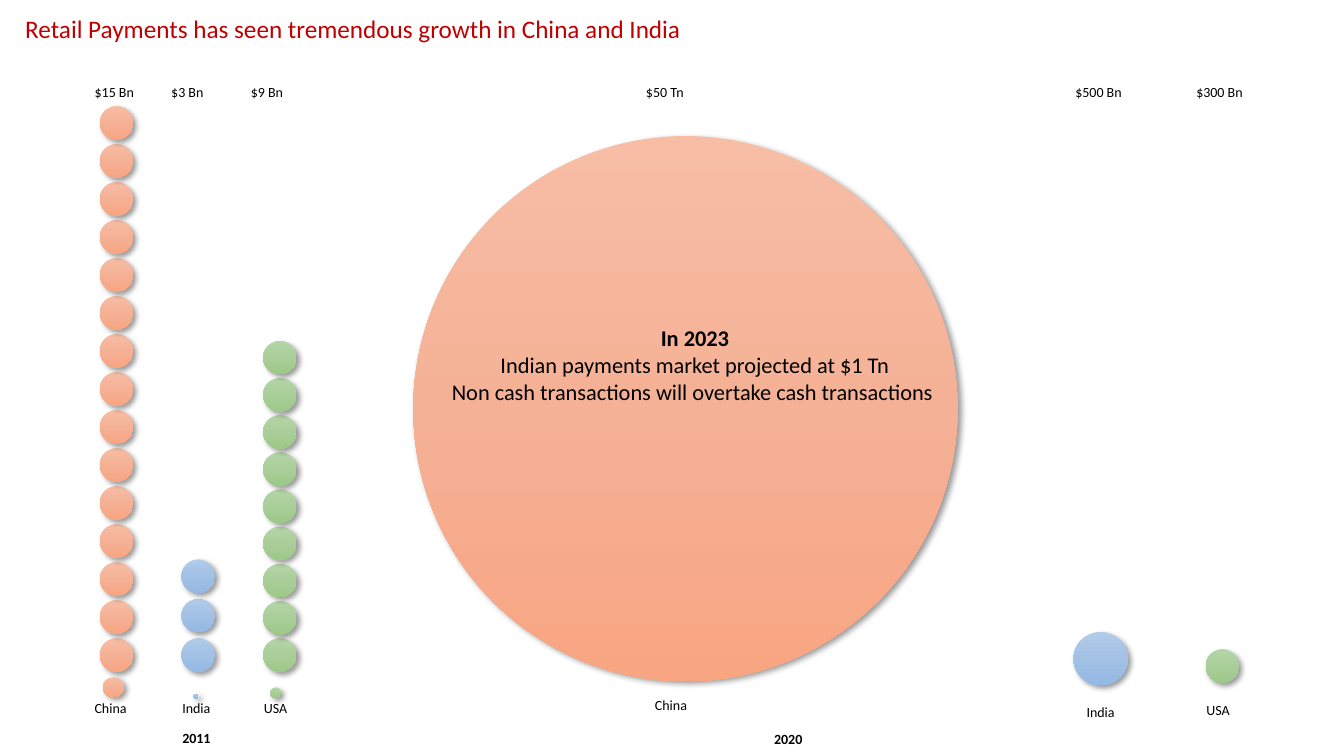
"""Build a slide comparing retail payments in China, India and the USA."""
from copy import deepcopy

from lxml import etree
from pptx import Presentation
from pptx.dml.color import RGBColor
from pptx.enum.shapes import MSO_SHAPE
from pptx.enum.text import MSO_ANCHOR, MSO_AUTO_SIZE, PP_ALIGN
from pptx.oxml.ns import qn
from pptx.util import Pt

OVAL = MSO_SHAPE.OVAL
TOP = MSO_ANCHOR.TOP
NO_FIT = MSO_AUTO_SIZE.NONE
LEFT, CENTER = PP_ALIGN.LEFT, PP_ALIGN.CENTER
FONT = "Calibri"

TITLE = "Retail Payments has seen tremendous growth in China and India"
FORECAST = [
    "In 2023",
    "Indian payments market projected at $1 Tn",
    "Non cash transactions will overtake cash transactions ",
]
GRADIENTS = {
    "China": ("F7BDA5", "F5B196", "F8A582"),
    "India": ("B1CBE9", "A3C1E5", "93B9E4"),
    "USA": ("B5D5A7", "AACE9A", "9CC987"),
}
# country, billions, left, pitch
STACKS = [
    ("China", 15, 71.3, 27.15),
    ("India", 3, 129.6, 28.1),
    ("USA", 9, 187.9, 26.55),
]
# country, left, top, width, height
BUBBLES = [
    ("USA", 861.1, 463.7, 24, 24),
    ("India", 766.8, 451.4, 38.9, 38.2),
    ("China", 295.2, 97.2, 388.8, 389.5),
    ("China", 73.4, 483.8, 15.1, 14.4),
    ("India", 138.2, 495.4, 3.6, 3.6),
    ("USA", 193, 491, 7.9, 7.9),
]
AMOUNTS = [
    ("$15 Bn", 60.5), ("$3 Bn", 115.2), ("$9 Bn", 172.1),
    ("$50 Tn", 454.3), ("$500 Bn", 761), ("$300 Bn", 847.4),
]
# text, left, top, width
COUNTRIES = [
    ("China", 60.5, 496.1, 45.4), ("India", 123.1, 496.1, 36.7),
    ("USA", 181.4, 496.1, 36.7), ("China", 460.8, 493.9, 45.4),
    ("India", 769, 499, 36.7), ("USA", 854.6, 497.5, 36.7),
]
YEARS = [("2011", 123.1, 517.7), ("2020", 545.8, 518.4)]
DOT = 24
STACK_BASE = 455.8
AMOUNT_TOP = 56.2
LABEL_HEIGHT = 19.4


def color(value):
    return RGBColor.from_string(value)


def write(box, lines, size, tint="000000", align=LEFT, bold_lines=()):
    frame = box.text_frame
    frame.text = "\n".join(lines)
    frame.word_wrap = True
    frame.auto_size = NO_FIT
    frame.vertical_anchor = TOP
    for index, para in enumerate(frame.paragraphs):
        para.alignment = align
        for span in para.runs:
            span.font.name = FONT
            span.font.size = Pt(size)
            span.font.bold = index in bold_lines
            span.font.color.rgb = color(tint)


def add_label(page, text, left, top, width, bold_lines=()):
    box = page.shapes.add_textbox(Pt(left), Pt(top), Pt(width), Pt(LABEL_HEIGHT))
    write(box, [text], 10, bold_lines=bold_lines)


def add_shadow(shape):
    shape.shadow.inherit = False
    effects = shape._element.spPr.find(qn("a:effectLst"))
    outer = etree.SubElement(
        effects, qn("a:outerShdw"), blurRad=str(Pt(4)), dist=str(Pt(3)),
        dir="2700000", algn="ctr", rotWithShape="0")
    black = etree.SubElement(outer, qn("a:srgbClr"), val="000000")
    etree.SubElement(black, qn("a:alpha"), val="40000")


def add_bubble(page, country, left, top, width, height):
    bubble = page.shapes.add_shape(OVAL, Pt(left), Pt(top), Pt(width), Pt(height))
    bubble.line.fill.background()
    bubble.fill.gradient()
    bubble.fill.gradient_angle = 270
    stops = bubble._element.spPr.find(qn("a:gradFill")).find(qn("a:gsLst"))
    stops.append(deepcopy(stops[0]))
    for index, (stop, tint) in enumerate(
            zip(bubble.fill.gradient_stops, GRADIENTS[country])):
        stop.position = index / 2
        stop.color.rgb = color(tint)
    add_shadow(bubble)


def main():
    deck = Presentation()
    deck.slide_width, deck.slide_height = Pt(960), Pt(540)
    page = deck.slides.add_slide(deck.slide_layouts[5])

    title = page.shapes.title
    title.left, title.top, title.width, title.height = Pt(10.8), Pt(5.8), Pt(935.3), Pt(28.8)
    write(title, [TITLE], 18, "C00000")

    for country, billions, left, pitch in STACKS:
        for level in range(billions):
            add_bubble(page, country, left, STACK_BASE - level * pitch, DOT, DOT)
    for bubble in BUBBLES:
        add_bubble(page, *bubble)

    for text, left in AMOUNTS:
        add_label(page, text, left, AMOUNT_TOP, 51.8)
    for label in COUNTRIES:
        add_label(page, *label)
    for text, left, top in YEARS:
        add_label(page, text, left, top, 36.7, bold_lines=(0,))

    forecast = page.shapes.add_textbox(Pt(241.9), Pt(228.2), Pt(509), Pt(67.7))
    write(forecast, FORECAST, 16, align=CENTER, bold_lines=(0,))
    deck.save("out.pptx")


if __name__ == "__main__":
    main()
